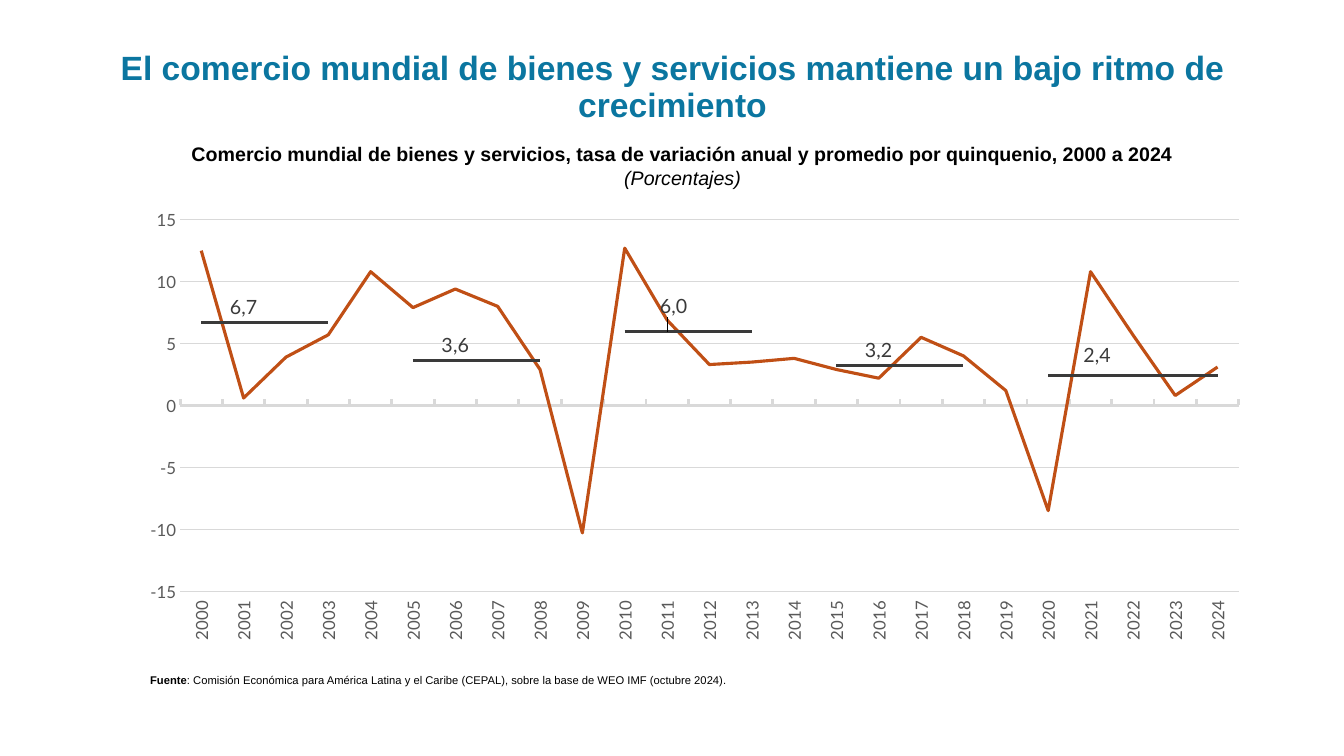
import dataclasses

import lxml.etree
import pptx
import pptx.chart.data
import pptx.dml.color
import pptx.enum.chart
import pptx.enum.text
import pptx.oxml
import pptx.oxml.ns
import pptx.util

Inches = pptx.util.Inches
qn = pptx.oxml.ns.qn


@dataclasses.dataclass(frozen=True)
class Theme:
    title: str = "0B76A0"
    text: str = "000000"
    axis_text: str = "595959"
    grid: str = "D9D9D9"
    annual: str = "C04F15"
    average: str = "3A3A3A"
    font: str = "Arial"
    chart_font: str = "Lato"
    title_size: int = 24
    subtitle_size: int = 14
    source_size: int = 8
    axis_size: int = 12
    label_size: int = 14
    series_width: float = 2.25


THEME = Theme()
FIRST_YEAR = 2000
ANNUAL = [12.5, 0.6, 3.9, 5.7, 10.8, 7.9, 9.4, 8, 2.9, -10.3, 12.7, 6.9, 3.3,
          3.5, 3.8, 2.9, 2.2, 5.5, 4, 1.2, -8.5, 10.8, 5.7, 0.8, 3.1]
AVERAGES = [6.7, 3.6, 6.0, 3.2, 2.4]
PERIOD = 5
# Label shifts by period, as fractions of the chart's width and height
LABEL_SHIFTS = {2: (0.006, -0.02), 4: (0.006, -0.01)}


def rgb(color):
    return pptx.dml.color.RGBColor.from_string(color)


def format_font(font, name=THEME.font, size=12, color=THEME.text, bold=False, italic=False):
    font.name, font.size = name, pptx.util.Pt(size)
    font.bold, font.italic = bold, italic
    font.color.rgb = rgb(color)


def format_line(line, color, width):
    line.color.rgb = rgb(color)
    line.width = pptx.util.Pt(width)


def add_text(page, area, paragraphs, align="LEFT", anchor="TOP", spacing=None, **font):
    """Each paragraph is a list of (text, font changes) pairs."""
    box = page.shapes.add_textbox(*map(Inches, area))
    frame = box.text_frame
    frame.word_wrap = True
    frame.vertical_anchor = getattr(pptx.enum.text.MSO_ANCHOR, anchor)
    for index, spans in enumerate(paragraphs):
        para = frame.add_paragraph() if index else frame.paragraphs[0]
        para.alignment = getattr(pptx.enum.text.PP_ALIGN, align)
        para.line_spacing = spacing
        for text, changes in spans:
            span = para.add_run()
            span.text = text
            format_font(span.font, **{**font, **changes})
    return box


def add_headings(page, area):
    left, top, width, height = area
    add_text(page, (left, top, width, 0.87),
             [[("El comercio mundial de bienes y servicios mantiene un bajo ritmo de crecimiento", {})]],
             align="CENTER", anchor="MIDDLE", spacing=0.9,
             size=THEME.title_size, color=THEME.title, bold=True)
    add_text(page, (left + 0.68, top + height - 0.57, 10.92, 0.57),
             [[("Comercio mundial de bienes y servicios, tasa de variación anual y promedio "
                "por quinquenio, 2000 a 2024", {"bold": True})],
              [("(Porcentajes)", {"italic": True})]],
             align="CENTER", size=THEME.subtitle_size)


def add_source(page, area):
    add_text(page, area,
             [[("Fuente", {"bold": True}),
               (": Comisión Económica para América Latina y el Caribe (CEPAL), sobre la base "
                "de WEO IMF (octubre 2024).", {})]],
             size=THEME.source_size)


def manual_layout(**values):
    layout = lxml.etree.Element(qn("c:layout"))
    manual = lxml.etree.SubElement(layout, qn("c:manualLayout"))
    for name, value in values.items():
        lxml.etree.SubElement(manual, qn("c:" + name)).set("val", str(value))
    return layout


def average_values():
    """Flat run per period, with a gap in the last year of all but the final one."""
    values = []
    for average in AVERAGES:
        values += [average] * (PERIOD - 1) + [None]
    values[-1] = AVERAGES[-1]
    return values


def format_axes(chart):
    category, value = chart.category_axis, chart.value_axis
    marks = pptx.enum.chart.XL_TICK_MARK
    for axis in (category, value):
        format_font(axis.tick_labels.font, THEME.chart_font, THEME.axis_size, THEME.axis_text)
        axis.major_tick_mark = axis.minor_tick_mark = marks.NONE
    category.major_tick_mark = marks.INSIDE
    category.tick_label_position = pptx.enum.chart.XL_TICK_LABEL_POSITION.LOW
    format_line(category.format.line, THEME.grid, 2)
    # Years read upwards
    category._element.find(qn("c:txPr")).find(qn("a:bodyPr")).set("rot", "-5400000")

    value.minimum_scale, value.maximum_scale, value.major_unit = -15, 15, 5
    value.tick_labels.number_format = "0"
    value.tick_labels.number_format_is_linked = False
    value.format.line.fill.background()
    format_line(value.major_gridlines.format.line, THEME.grid, 0.75)


def label_averages(series):
    for period, average in enumerate(AVERAGES):
        year = period * PERIOD + 1
        label = series.points[year].data_label
        span = label.text_frame.paragraphs[0].add_run()
        span.text = f"{average:.1f}".replace(".", ",")
        format_font(span.font, THEME.chart_font, THEME.label_size, THEME.average)
        label.position = pptx.enum.chart.XL_LABEL_POSITION.ABOVE
        if period in LABEL_SHIFTS:
            x, y = LABEL_SHIFTS[period]
            element = series._element.xpath(f"c:dLbls/c:dLbl[c:idx/@val='{year}']")[0]
            element.insert(1, manual_layout(x=x, y=y))


def add_trade_chart(page, area):
    data = pptx.chart.data.CategoryChartData()
    data.categories = [str(FIRST_YEAR + index) for index in range(len(ANNUAL))]
    data.add_series("Variación anual", ANNUAL)
    data.add_series("Promedio por quinquenio", average_values())
    chart = page.shapes.add_chart(pptx.enum.chart.XL_CHART_TYPE.LINE,
                                  *map(Inches, area), data).chart
    chart.has_legend = chart.has_title = False
    format_font(chart.font, THEME.chart_font, 10)
    chart.plots[0].vary_by_categories = False
    format_axes(chart)
    for series, color in zip(chart.plots[0].series, (THEME.annual, THEME.average)):
        series.smooth = False
        series.marker.style = pptx.enum.chart.XL_MARKER_STYLE.NONE
        format_line(series.format.line, color, THEME.series_width)
    label_averages(chart.plots[0].series[1])

    # Fixed plot area
    plot_area = chart._chartSpace.chart.plotArea
    for layout in plot_area.findall(qn("c:layout")):
        plot_area.remove(layout)
    plot_area.insert(0, manual_layout(layoutTarget="inner", xMode="edge", yMode="edge",
                                      x=0.051, y=0.074, w=0.946, h=0.803))


def main():
    deck = pptx.Presentation()
    deck.slide_width, deck.slide_height = Inches(13.33), Inches(7.5)
    page = deck.slides.add_slide(deck.slide_layouts[6])
    add_headings(page, (0.63, 0.44, 12.08, 1.49))
    add_trade_chart(page, (1.22, 1.84, 11.1, 4.59))
    add_source(page, (1.39, 6.63, 9.1, 0.24))
    deck.save("out.pptx")


if __name__ == "__main__":
    main()
